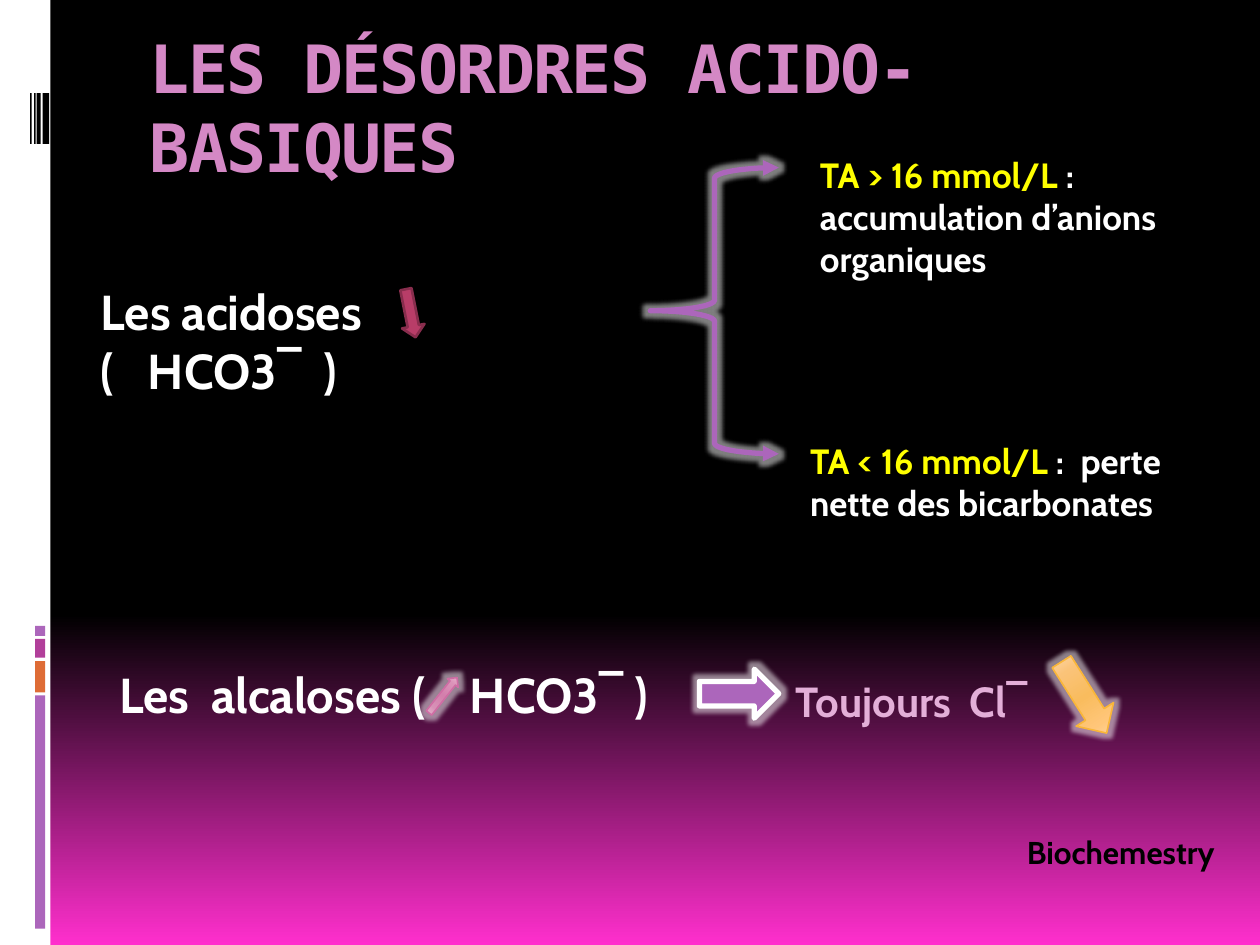
from pptx import Presentation
from pptx.dml.color import RGBColor
from pptx.enum.shapes import MSO_SHAPE as Shape
from pptx.enum.text import MSO_ANCHOR as Anchor
from pptx.oxml import parse_xml
from pptx.oxml.ns import nsdecls, qn
from pptx.util import Cm, Pt

hex_color = RGBColor.from_string
PURPLE, WHITE, BLACK, YELLOW = "AC66BB", "FFFFFF", "000000", "FFFF00"
PINK, LILAC = "D488C5", "E3AFD8"


def set_gradient(fill, element, stops):
    """Fill from top to bottom with (percent, colour) stops."""
    fill.gradient()
    fill.gradient_angle = 270
    stop_list = element.find(".//" + qn("a:gsLst"))
    for old in list(stop_list):
        stop_list.remove(old)
    for percent, color in stops:
        stop_list.append(parse_xml(
            f'<a:gs {nsdecls("a")} pos="{percent * 1000}"><a:srgbClr val="{color}"/></a:gs>'))


def add_text(left, top, width, height, runs, font="Cabin", indent=0):
    """Add bold text from (text, size, colour, letter spacing in points) runs."""
    box = page.shapes.add_textbox(Cm(left), Cm(top), Cm(width), Cm(height))
    frame = box.text_frame
    frame.word_wrap = True
    frame.vertical_anchor = Anchor.TOP
    para = frame.paragraphs[0]
    if indent:
        para._p.get_or_add_pPr().set("marL", str(Cm(indent)))
    for text, size, color, spacing in runs:
        if text == "\n":
            para.add_line_break()
            continue
        span = para.add_run()
        span.text = text
        span.font.name = font
        span.font.size = Pt(size)
        span.font.bold = True
        span.font.color.rgb = hex_color(color)
        if spacing:
            span.font._element.set("spc", str(spacing * 100))


deck = Presentation()
deck.slide_width, deck.slide_height = Cm(25.4), Cm(19.05)
page = deck.slides.add_slide(deck.slide_layouts[6])

# Background
set_gradient(page.background.fill, page.element, [(0, BLACK), (65, BLACK), (100, "FF2FCD")])

# Side band with coloured blocks and thin bars
side_blocks = [
    (0, 0, 1.02, 19.05, WHITE),
    (0.71, 14.02, 0.2, 4.7, PURPLE),
    (0.71, 13.33, 0.2, 0.63, "DE6C36"),
    (0.71, 12.88, 0.2, 0.38, "B13F9A"),
    (0.71, 12.62, 0.2, 0.2, PURPLE),
]
side_bars = [(left, 1.88, width, 1.02, BLACK)
             for left, width in [(0.86, 0.13), (0.74, 0.08), (0.69, 0.03), (0.61, 0.03)]]
for left, top, width, height, color in side_blocks + side_bars:
    block = page.shapes.add_shape(Shape.RECTANGLE, Cm(left), Cm(top), Cm(width), Cm(height))
    block.shadow.inherit = False
    block.fill.solid()
    block.fill.fore_color.rgb = hex_color(color)
    block.line.fill.background()

# Title
add_text(2.77, 0.41, 21.59, 1.78, [("LES DÉSORDRES ACIDO-BASIQUES", 38, PINK, -1)],
         font="DejaVu Sans Mono")

# Statements; a widened space leaves room for an arrow
add_text(1.78, 5.56, 10.92, 1.45, [
    ("Les acidoses", 28, WHITE, 0), ("\n", 28, WHITE, 0), ("(", 28, WHITE, 0),
    (" ", 28, WHITE, 13), ("HCO3¯", 28, WHITE, 0), (" ", 28, WHITE, 6), (")", 28, WHITE, 0)])
add_text(1.57, 13.28, 12.12, 1.45, [
    ("Les", 28, WHITE, 0), (" ", 28, WHITE, 6), ("alcaloses (", 28, WHITE, 0),
    (" ", 28, WHITE, 19), ("HCO3¯ )", 28, WHITE, 0)], indent=0.59)
add_text(16.28, 2.97, 8.33, 2.82, [
    ("TA > 16 mmol/L ", 20, YELLOW, 0), (": accumulation d’anions organiques", 20, WHITE, 0)])
add_text(16.08, 8.74, 8.33, 1.96, [
    ("TA < 16 mmol/L ", 20, YELLOW, 0), (":", 20, WHITE, 0), (" ", 20, WHITE, 5),
    ("perte nette des bicarbonates", 20, WHITE, 0)])
add_text(15.47, 13.49, 9.93, 1.27, [
    ("Toujours", 24, LILAC, 0), (" ", 24, LILAC, 5), ("Cl¯", 24, LILAC, 0)], indent=0.32)
add_text(20.45, 16.66, 4.95, 1.8, [("Biochemestry", 18, BLACK, 0)])

# Brace and arrows: kind, box, rotation, fill, line colour, line width, glow
rose = [(0, "EFC5D9"), (25, "D790B6"), (50, "D37FAC"), (75, "DB92B8"), (100, "F1C3D9")]
amber = [(0, "FFE0BF"), (25, "FAC378"), (50, "F9BC5E"), (75, "FFC679"), (100, "FFE0BF")]
symbols = [
    (Shape.DOWN_ARROW, (8.79, 13.56, 0.28, 0.91), 218.5, rose, "CF6DA4", 0.94, True),
    (Shape.LEFT_BRACE, (13.11, 3.38, 2.59, 5.77), 0, None, PURPLE, 3, True),
    (Shape.DOWN_ARROW, (8.05, 5.82, 0.46, 0.99), 348.7, "B83D68", "882D4D", 1.5, False),
    (Shape.RIGHT_ARROW, (14.1, 13.49, 1.6, 0.99), 0, PURPLE, WHITE, 3, True),
    (Shape.DOWN_ARROW, (21.41, 13.21, 0.89, 1.7), 327.7, amber, "F9B639", 0.94, True),
]
for kind, bounds, rotation, fill, line_color, line_width, glow in symbols:
    symbol = page.shapes.add_shape(kind, *[Cm(value) for value in bounds])
    symbol.rotation = rotation
    symbol.line.color.rgb = hex_color(line_color)
    symbol.line.width = Pt(line_width)
    if fill is None:
        symbol.fill.background()
    elif isinstance(fill, str):
        symbol.fill.solid()
        symbol.fill.fore_color.rgb = hex_color(fill)
    else:
        set_gradient(symbol.fill, symbol.element, fill)
    symbol.shadow.inherit = False
    if glow:
        symbol.element.spPr.find(qn("a:effectLst")).append(parse_xml(
            f'<a:glow {nsdecls("a")} rad="63500"><a:srgbClr val="{WHITE}">'
            '<a:alpha val="50000"/></a:srgbClr></a:glow>'))
    if kind == Shape.LEFT_BRACE:
        symbol.adjustments[0] = 0.083
        for end in ("headEnd", "tailEnd"):
            symbol.line._get_or_add_ln().append(
                parse_xml(f'<a:{end} {nsdecls("a")} type="triangle"/>'))

deck.save("out.pptx")
